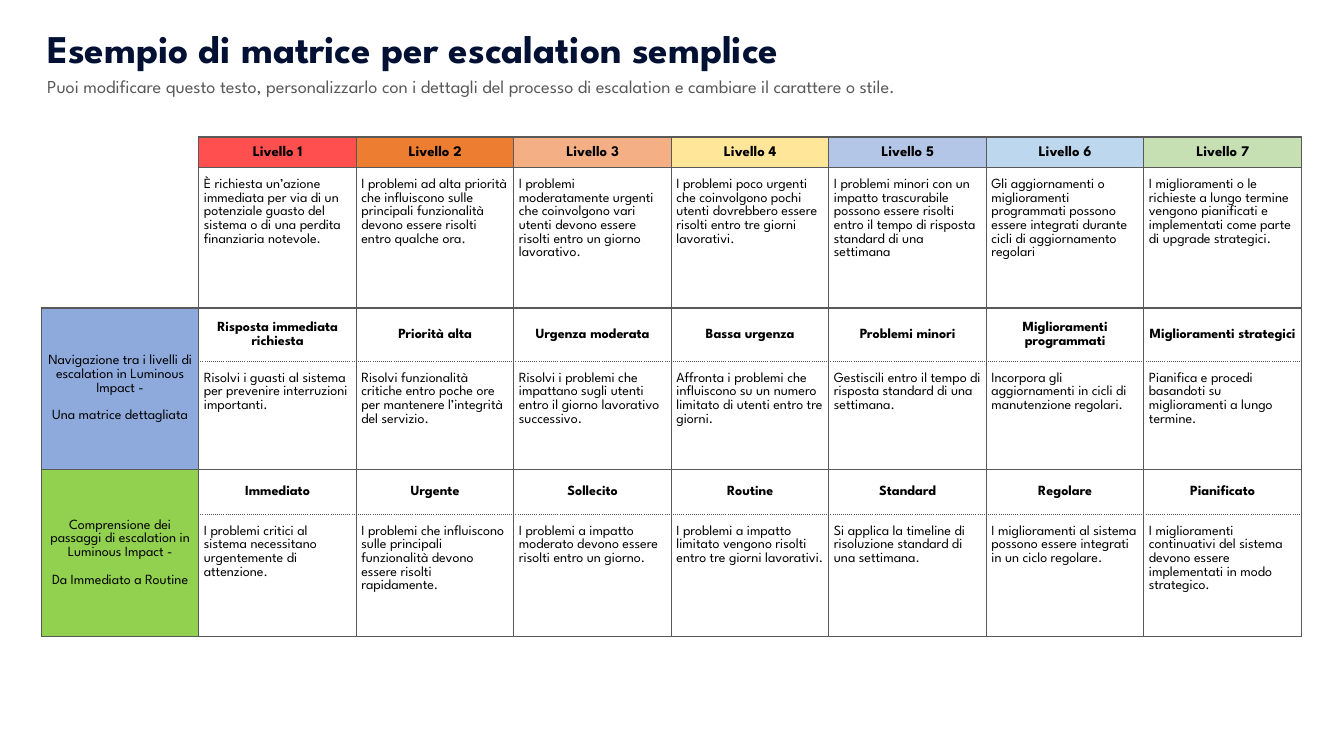
"""Build the slide with the seven-level escalation matrix."""
from lxml.etree import SubElement
from pptx import Presentation
from pptx.dml.color import RGBColor
from pptx.enum.text import MSO_ANCHOR, PP_ALIGN
from pptx.oxml.ns import qn
from pptx.util import Inches, Pt

FONT = "League Spartan"
COLORS = {"title": "011033", "grey": "595959", "text": "000000",
          "navigation": "8EA9DB", "steps": "92D050"}
LEVEL_FILLS = ["FF4F4F", "ED7D31", "F4B084", "FFE699", "B4C6E7", "BDD7EE", "C6E0B4"]
ROW_HEIGHTS = [0.3, 1.39, 0.53, 1.07, 0.45, 1.21]
LEVELS = len(LEVEL_FILLS)
TABLE_WIDTH = 12.5
HEADING_ROWS = (0, 2, 4)
DOTTED_EDGES = {(2, "B"), (3, "T"), (4, "B"), (5, "T")}
CORNER_EDGES = {0: "R", 1: "RB"}

ROWS = [
    [f"Livello {number}" for number in range(1, LEVELS + 1)],
    ["È richiesta un’azione immediata per via di un potenziale guasto del sistema o di una perdita finanziaria notevole.",
     "I problemi ad alta priorità che influiscono sulle principali funzionalità devono essere risolti entro qualche ora.",
     "I problemi moderatamente urgenti che coinvolgono vari utenti devono essere risolti entro un giorno lavorativo.",
     "I problemi poco urgenti che coinvolgono pochi utenti dovrebbero essere risolti entro tre giorni lavorativi.",
     "I problemi minori con un impatto trascurabile possono essere risolti entro il tempo di risposta standard di una settimana",
     "Gli aggiornamenti o miglioramenti programmati possono essere integrati durante cicli di aggiornamento regolari",
     "I miglioramenti o le richieste a lungo termine vengono pianificati e implementati come parte di upgrade strategici."],
    ["Risposta immediata richiesta", "Priorità alta", "Urgenza moderata", "Bassa urgenza",
     "Problemi minori", "Miglioramenti programmati", "Miglioramenti strategici"],
    ["Risolvi i guasti al sistema per prevenire interruzioni importanti.",
     "Risolvi funzionalità critiche entro poche ore per mantenere l’integrità del servizio.",
     "Risolvi i problemi che impattano sugli utenti entro il giorno lavorativo successivo.",
     "Affronta i problemi che influiscono su un numero limitato di utenti entro tre giorni.",
     "Gestiscili entro il tempo di risposta standard di una settimana.",
     "Incorpora gli aggiornamenti in cicli di manutenzione regolari.",
     "Pianifica e procedi basandoti su miglioramenti a lungo termine."],
    ["Immediato", "Urgente", "Sollecito", "Routine", "Standard", "Regolare", "Pianificato"],
    ["I problemi critici al sistema necessitano urgentemente di attenzione.",
     "I problemi che influiscono sulle principali funzionalità devono essere risolti rapidamente.",
     "I problemi a impatto moderato devono essere risolti entro un giorno.",
     "I problemi a impatto limitato vengono risolti entro tre giorni lavorativi.",
     "Si applica la timeline di risoluzione standard di una settimana.",
     "I miglioramenti al sistema possono essere integrati in un ciclo regolare.",
     "I miglioramenti continuativi del sistema devono essere implementati in modo strategico."],
]
SIDE_LABELS = {
    2: ("navigation", ["Navigazione tra i livelli di escalation in Luminous Impact -",
                       "Una matrice dettagliata"]),
    4: ("steps", ["Comprensione dei passaggi di escalation in Luminous Impact -",
                  "Da Immediato a Routine"]),
}


def write(frame, lines, size, color="text", bold=False, layout=None):
    frame.word_wrap = True
    for index, line in enumerate(lines):
        para = frame.paragraphs[0] if index == 0 else frame.add_paragraph()
        for name, value in (layout or {}).items():
            setattr(para, name, value)
        if index:
            para.space_before = Pt(size)
        span = para.add_run()
        span.text = line
        for name, value in {"name": FONT, "size": Pt(size), "bold": bold}.items():
            setattr(span.font, name, value)
        span.font.color.rgb = RGBColor.from_string(COLORS[color])


def draw_edges(cell, row, visible):
    properties = cell._tc.get_or_add_tcPr()
    for side in "LRTB":
        line = SubElement(properties, qn(f"a:ln{side}"), w=str(Pt(1)))
        if side not in visible:
            SubElement(line, qn("a:noFill"))
            continue
        SubElement(SubElement(line, qn("a:solidFill")), qn("a:srgbClr"), val=COLORS["grey"])
        dash = "sysDot" if (row, side) in DOTTED_EDGES else "solid"
        SubElement(line, qn("a:prstDash"), val=dash)


deck = Presentation()
deck.slide_width, deck.slide_height = Inches(13.33), Inches(7.5)
page = deck.slides.add_slide(deck.slide_layouts[6])

table = page.shapes.add_table(len(ROWS), LEVELS + 1, Inches(0.41), Inches(1.36),
                              Inches(TABLE_WIDTH), Inches(sum(ROW_HEIGHTS))).table
table.first_row = table.horz_banding = False
for column in table.columns:
    column.width = Inches(TABLE_WIDTH / (LEVELS + 1))
for table_row, height in zip(table.rows, ROW_HEIGHTS):
    table_row.height = Inches(height)

centred = {"alignment": PP_ALIGN.CENTER, "line_spacing": 1.07}
body = {"alignment": PP_ALIGN.LEFT, "line_spacing": 1.07, "space_before": Pt(12)}
for row, texts in enumerate(ROWS):
    heading = row in HEADING_ROWS
    for column in range(LEVELS + 1):
        cell = table.cell(row, column)
        middle = heading or column == 0
        margins = {"margin_left": 0.05, "margin_right": 0.05,
                   "margin_top": 0 if middle else 0.1, "margin_bottom": 0}
        for name, value in margins.items():
            setattr(cell, name, Inches(value))
        cell.vertical_anchor = MSO_ANCHOR.MIDDLE if middle else MSO_ANCHOR.TOP
        dotless = column == 0
        draw_edges(cell, None if dotless else row,
                   CORNER_EDGES.get(row, "LRTB") if dotless else "LRTB")
        fill = None
        if column:
            write(cell.text_frame, [texts[column - 1]], 10 if row else 10.5,
                  bold=heading, layout=centred if heading else body)
            fill = None if row else LEVEL_FILLS[column - 1]
        elif row in SIDE_LABELS:
            color, lines = SIDE_LABELS[row]
            write(cell.text_frame, lines, 10, layout=centred)
            fill = COLORS[color]
        if fill:
            cell.fill.solid()
            cell.fill.fore_color.rgb = RGBColor.from_string(fill)
        else:
            cell.fill.background()
for row in SIDE_LABELS:
    table.cell(row, 0).merge(table.cell(row + 1, 0))

HEADINGS = [
    ("Esempio di matrice per escalation semplice", 0.19, 10.67, 0.57, 28, "title", True),
    ("Puoi modificare questo testo, personalizzarlo con i dettagli del processo di escalation "
     "e cambiare il carattere o stile.", 0.7, 10.5, 0.32, 13, "grey", False),
]
for text, top, width, height, size, color, bold in HEADINGS:
    box = page.shapes.add_textbox(Inches(0.37), Inches(top), Inches(width), Inches(height))
    write(box.text_frame, [text], size, color, bold)

deck.save("out.pptx")
